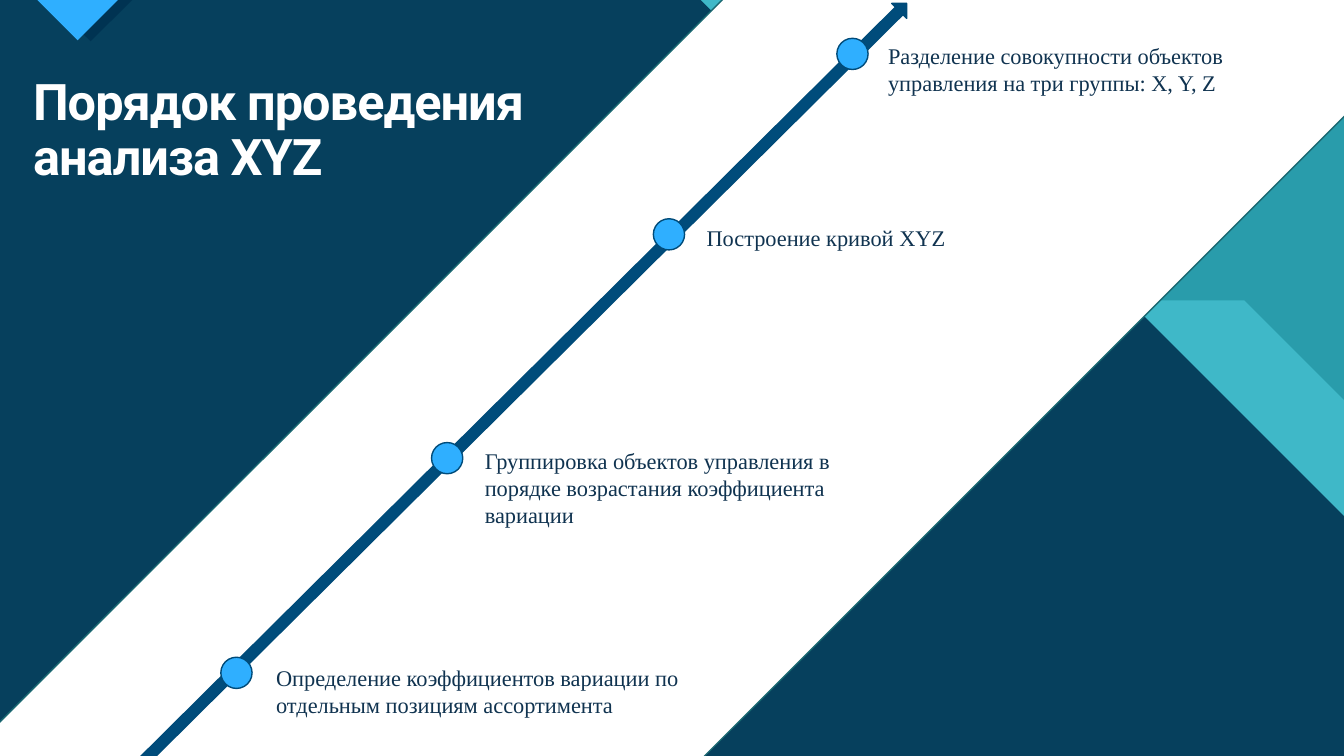
from pptx import Presentation
from pptx.dml.color import RGBColor
from pptx.enum import shapes, text
from pptx.oxml import xmlchemy
from pptx.util import Inches, Pt

COLORS = {
    "teal": "299CAB",
    "aqua": "47C3D3",
    "navy": "003352",
    "sky": "2FAFFF",
    "white": "FFFFFF",
    "band_edge": "1A6871",
    "arrow": "004C7B",
    "outline": "004B79",
    "body": "103350",
}
SLIDE_BOX = (0, 0, 13.33, 7.5)
DOT_SIZE = 0.31

# Dot left and top, label left, top, width and height, label text
STEPS = [
    (2.19, 6.52, 2.64, 6.54, 4.67, 0.64,
     "Определение коэффициентов вариации по отдельным позициям ассортимента"),
    (4.28, 4.39, 4.71, 4.39, 4.01, 0.91,
     "Группировка объектов управления в порядке возрастания коэффициента вариации"),
    (6.48, 2.17, 6.91, 2.17, 5.07, 0.37, "Построение кривой XYZ"),
    (8.3, 0.38, 8.71, 0.37, 4.63, 0.64,
     "Разделение совокупности объектов управления на три группы: X, Y, Z"),
]


def color(name):
    return RGBColor.from_string(COLORS[name])


def paint(shape, fill, line=None, opacity=None):
    shape.shadow.inherit = False
    shape.fill.solid()
    shape.fill.fore_color.rgb = color(fill)
    if opacity is not None:
        solid_color = shape.fill._xPr.solidFill[0]
        alpha = xmlchemy.OxmlElement("a:alpha")
        alpha.set("val", str(opacity * 1000))
        solid_color.append(alpha)
    if line:
        shape.line.color.rgb = color(line)
        shape.line.width = Pt(1)
    else:
        shape.line.fill.background()


def add_preset(slide, kind, box, fill, line=None, rotation=0):
    shape = slide.shapes.add_shape(kind, *(Inches(value) for value in box))
    shape.rotation = rotation
    paint(shape, fill, line)
    return shape


def add_polygon(slide, box, points, fill, opacity=None):
    left, top = box[:2]
    corners = [(Inches(left + x), Inches(top + y)) for x, y in points]
    builder = slide.shapes.build_freeform(*corners[0])
    builder.add_line_segments(corners[1:], close=True)
    paint(builder.convert_to_shape(), fill, opacity=opacity)


def add_text(slide, box, content, *, font, size, fill, bold=False,
             line_spacing=None, tracking=None, anchor=text.MSO_ANCHOR.TOP):
    text_box = slide.shapes.add_textbox(*(Inches(value) for value in box))
    frame = text_box.text_frame
    frame.word_wrap = True
    frame.auto_size = text.MSO_AUTO_SIZE.SHAPE_TO_FIT_TEXT
    frame.vertical_anchor = anchor
    paragraph = frame.paragraphs[0]
    if line_spacing:
        paragraph.line_spacing = line_spacing
    run = paragraph.add_run()
    run.text = content
    run.font.name = font
    run.font.size = Pt(size)
    run.font.bold = bold
    run.font.color.rgb = color(fill)
    if tracking is not None:
        run.font._element.set("spc", str(round(tracking * 100)))


def draw_backdrop(slide, box):
    width, height = box[2:]
    slide.background.fill.solid()
    slide.background.fill.fore_color.rgb = color("teal")
    # Layered angular fields
    add_polygon(slide, box, [
        (0, 0), (8.25, 0), (11.22, 2.98), (12.34, 2.98),
        (width, 3.97), (width, height), (0, height),
    ], "aqua", opacity=74)
    add_polygon(slide, box, [
        (0, 0), (6.95, 0), (9.92, 2.97), (11.18, 2.97),
        (width, 5.12), (width, height), (0, height),
    ], "navy", opacity=90)
    # Corner triangle and its shade
    add_polygon(slide, box, [(0.48, 0), (1.31, 0), (0.9, 0.41)], "navy")
    add_polygon(slide, box, [(0.37, 0), (1.17, 0), (0.77, 0.4)], "sky")


def draw_title(slide, box):
    add_text(slide, box, "Порядок проведения анализа XYZ", font="Roboto",
             size=36, fill="white", bold=True, line_spacing=0.9,
             tracking=-0.7, anchor=text.MSO_ANCHOR.MIDDLE)


def draw_roadmap(slide, box):
    left, top = box[:2]
    # Diagonal band and arrow
    add_preset(slide, shapes.MSO_SHAPE.RECTANGLE,
               (left - 0.6, top + 1.33, 15.01, 5.18), "white", "band_edge", 315)
    add_preset(slide, shapes.MSO_SHAPE.UP_ARROW,
               (left + 5.01, top - 1.58, 0.21, 10.93), "arrow", "outline", 45.2)
    # Steps along the arrow
    for dot_x, dot_y, label_x, label_y, width, height, label in STEPS:
        add_preset(slide, shapes.MSO_SHAPE.OVAL,
                   (left + dot_x, top + dot_y, DOT_SIZE, DOT_SIZE),
                   "sky", "outline")
        add_text(slide, (left + label_x, top + label_y, width, height), label,
                 font="Times New Roman", size=16, fill="body")


def main():
    presentation = Presentation()
    presentation.slide_width = Inches(SLIDE_BOX[2])
    presentation.slide_height = Inches(SLIDE_BOX[3])
    slide = presentation.slides.add_slide(presentation.slide_layouts[6])
    draw_backdrop(slide, SLIDE_BOX)
    draw_title(slide, (0.23, 0.71, 5.68, 1.19))
    draw_roadmap(slide, SLIDE_BOX)
    presentation.save("out.pptx")


if __name__ == "__main__":
    main()
